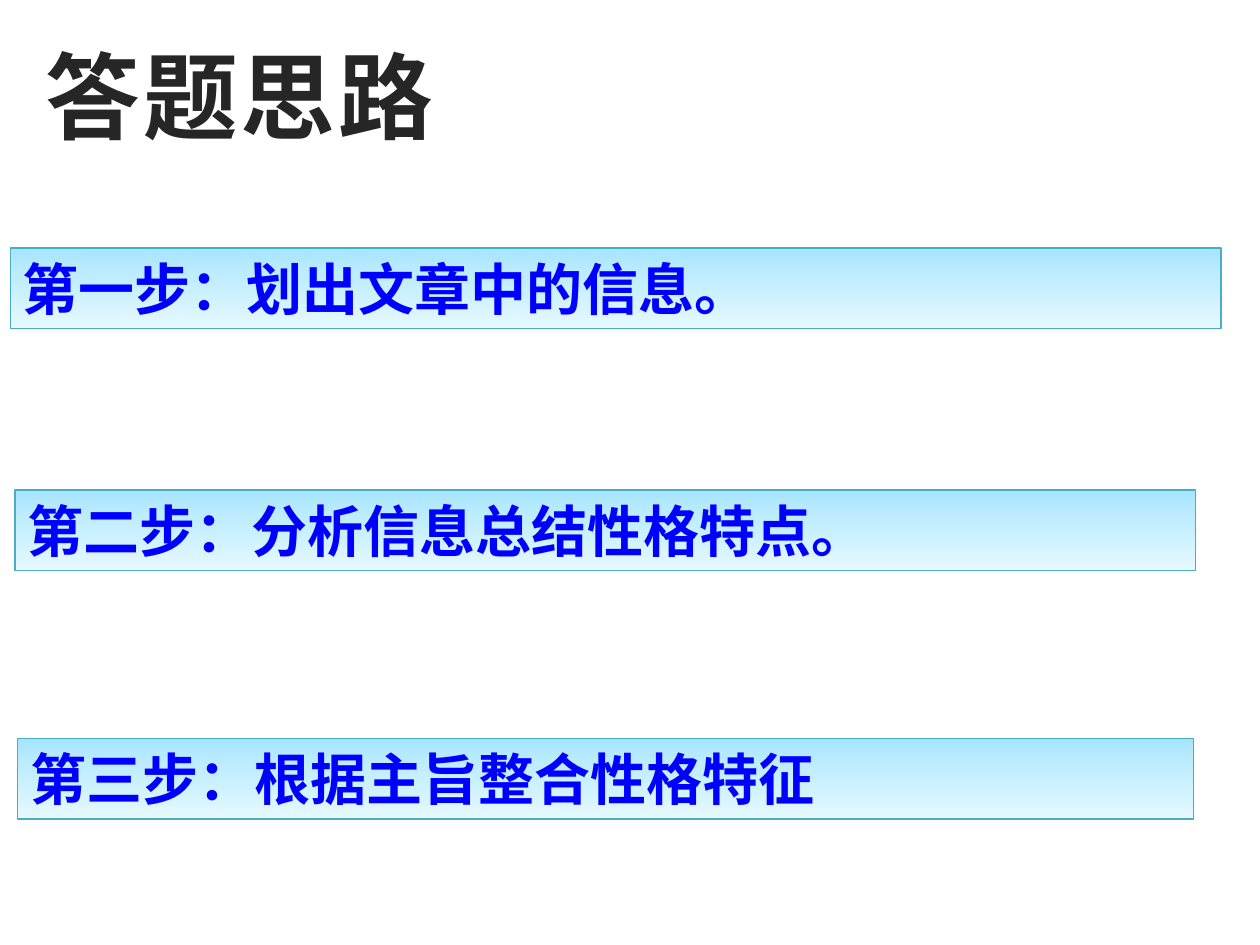
from copy import deepcopy

from pptx import Presentation
from pptx.dml.color import RGBColor
from pptx.enum.shapes import MSO_SHAPE
from pptx.enum.text import MSO_ANCHOR, MSO_AUTO_SIZE, PP_ALIGN
from pptx.oxml.ns import qn
from pptx.util import Pt

TITLE = "答题思路"
TITLE_BOX = (18.7, 18, 238.3, 72.7)
STEPS = [  # text, left, top, width
    ("第一步：划出文章中的信息。", 5.8, 141.8, 691.9),
    ("第二步：分析信息总结性格特点。", 8.6, 280.1, 674.6),
    ("第三步：根据主旨整合性格特征", 10.1, 421.9, 671.8),
]
STEP_HEIGHT = 46.1
GRADIENT = [(0, "A6E4FF"), (0.35, "BFEDFF"), (1, "E6F9FF")]
CJK_FONT = "Noto Sans CJK SC"


def rgb(value):
    return RGBColor.from_string(value)


def fill_gradient(shape):
    """Fill from top to bottom with the GRADIENT stops."""
    fill = shape.fill
    fill.gradient()
    fill.gradient_angle = 270
    stop_list = shape._element.spPr.find(qn("a:gradFill")).find(qn("a:gsLst"))
    stop_list.insert(1, deepcopy(stop_list[0]))
    for stop, (position, color) in zip(fill.gradient_stops, GRADIENT):
        stop.position = position
        stop.color.rgb = rgb(color)


def write(box, text, font_name, size, color, wrap, spacing=0):
    frame = box.text_frame
    frame.word_wrap = wrap
    frame.auto_size = MSO_AUTO_SIZE.SHAPE_TO_FIT_TEXT
    frame.vertical_anchor = MSO_ANCHOR.TOP
    para = frame.paragraphs[0]
    para.alignment = PP_ALIGN.LEFT
    span = para.add_run()
    span.text = text
    font = span.font
    font.name, font.size, font.bold = font_name, Pt(size), True
    font.color.rgb = rgb(color)
    properties = span._r.get_or_add_rPr()
    properties.set("lang", "zh-CN")
    if spacing:
        properties.set("spc", str(spacing * 100))
    east_asian = properties.makeelement(qn("a:ea"), {"typeface": CJK_FONT})
    properties.find(qn("a:latin")).addnext(east_asian)


deck = Presentation()
deck.slide_width, deck.slide_height = Pt(720), Pt(540)
page = deck.slides.add_slide(deck.slide_layouts[6])

for text, left, top, width in STEPS:
    bar = page.shapes.add_shape(
        MSO_SHAPE.RECTANGLE, Pt(left), Pt(top), Pt(width), Pt(STEP_HEIGHT))
    bar.shadow.inherit = False
    fill_gradient(bar)
    bar.line.color.rgb = rgb("4BACC6")
    bar.line.width = Pt(0.75)
    write(bar, text, CJK_FONT, 32, "0000FF", wrap=True)

title = page.shapes.add_textbox(*map(Pt, TITLE_BOX))
write(title, TITLE, "Arial", 54, "262626", wrap=False, spacing=2)

deck.save("out.pptx")
